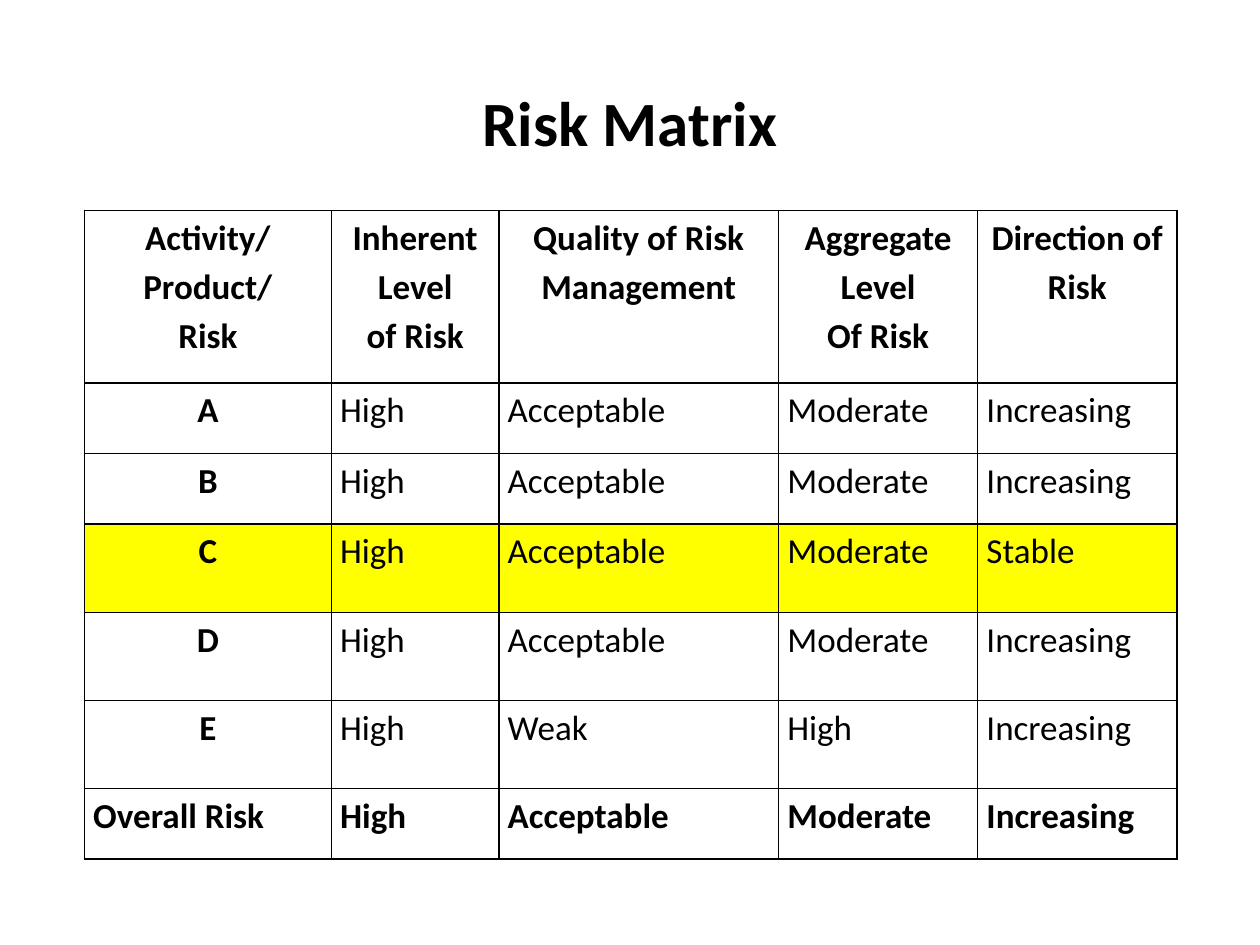
from dataclasses import dataclass

from lxml.etree import SubElement
from pptx import Presentation
from pptx.dml.color import RGBColor
from pptx.enum.text import MSO_ANCHOR, PP_ALIGN
from pptx.oxml.ns import qn
from pptx.util import Inches, Pt


@dataclass(frozen=True)
class Theme:
    font: str = "Calibri"
    ink: str = "000000"
    highlight: str = "FFFF00"
    title_size: int = 36
    table_size: int = 20
    line_spacing: float = 1.15
    border: int = 1


THEME = Theme()

# Content: a newline starts a new paragraph
TITLE = "Risk Matrix"
ROWS = [
    ("Activity/\nProduct/\nRisk", "Inherent Level\nof Risk", "Quality of Risk Management",
     "Aggregate Level\nOf Risk", "Direction of Risk"),
    ("A", "High", "Acceptable", "Moderate", "Increasing"),
    ("B", "High", "Acceptable", "Moderate", "Increasing"),
    ("C", "High", "Acceptable", "Moderate", "Stable"),
    ("D", "High", "Acceptable", "Moderate", "Increasing"),
    ("E", "High", "Weak", "High", "Increasing"),
    ("Overall Risk", "High", "Acceptable", "Moderate", "Increasing"),
]
HIGHLIGHTED = "C"

# Grid, in inches
TABLE_LEFT, TABLE_TOP = 0.67, 1.67
COL_WIDTHS = [1.96, 1.33, 2.22, 1.58, 1.58]
ROW_HEIGHTS = [1.37, 0.56, 0.56, 0.7, 0.7, 0.7, 0.56]


def style(p, size, bold, align):
    p.alignment = align
    p.font.name = THEME.font
    p.font.size = Pt(size)
    p.font.bold = bold
    p.font.color.rgb = RGBColor.from_string(THEME.ink)


def add_borders(cell):
    tc_pr = cell._tc.get_or_add_tcPr()
    for side in ("a:lnL", "a:lnR", "a:lnT", "a:lnB"):
        ln = SubElement(tc_pr, qn(side), w=str(Pt(THEME.border)))
        SubElement(SubElement(ln, qn("a:solidFill")), qn("a:srgbClr"), val=THEME.ink)


def fill_cell(cell, text, bold, align, highlighted):
    add_borders(cell)
    if highlighted:
        cell.fill.solid()
        cell.fill.fore_color.rgb = RGBColor.from_string(THEME.highlight)
    else:
        cell.fill.background()
    cell.margin_left = cell.margin_right = Inches(0.07)
    cell.margin_top = cell.margin_bottom = 0
    cell.text = text
    for p in cell.text_frame.paragraphs:
        p.line_spacing = THEME.line_spacing
        style(p, THEME.table_size, bold, align)


prs = Presentation()
prs.slide_width, prs.slide_height = Inches(10), Inches(7.5)
s = prs.slides.add_slide(prs.slide_layouts[5])

# Title
title = s.shapes.title
title.left, title.top, title.width, title.height = map(Inches, (0.5, 0.5, 9, 0.92))
title.text_frame.text = TITLE
title.text_frame.vertical_anchor = MSO_ANCHOR.MIDDLE
style(title.text_frame.paragraphs[0], THEME.title_size, True, PP_ALIGN.CENTER)

# Risk table
table = s.shapes.add_table(
    len(ROWS), len(COL_WIDTHS), Inches(TABLE_LEFT), Inches(TABLE_TOP),
    Inches(sum(COL_WIDTHS)), Inches(sum(ROW_HEIGHTS))).table
table.first_row = table.horz_banding = False
for column, width in zip(table.columns, COL_WIDTHS):
    column.width = Inches(width)
for row, height in zip(table.rows, ROW_HEIGHTS):
    row.height = Inches(height)

last = len(ROWS) - 1
for i, values in enumerate(ROWS):
    for j, text in enumerate(values):
        bold = i in (0, last) or j == 0
        centred = i == 0 or (j == 0 and i != last)
        fill_cell(table.cell(i, j), text, bold,
                  PP_ALIGN.CENTER if centred else PP_ALIGN.LEFT, values[0] == HIGHLIGHTED)

prs.save("out.pptx")
